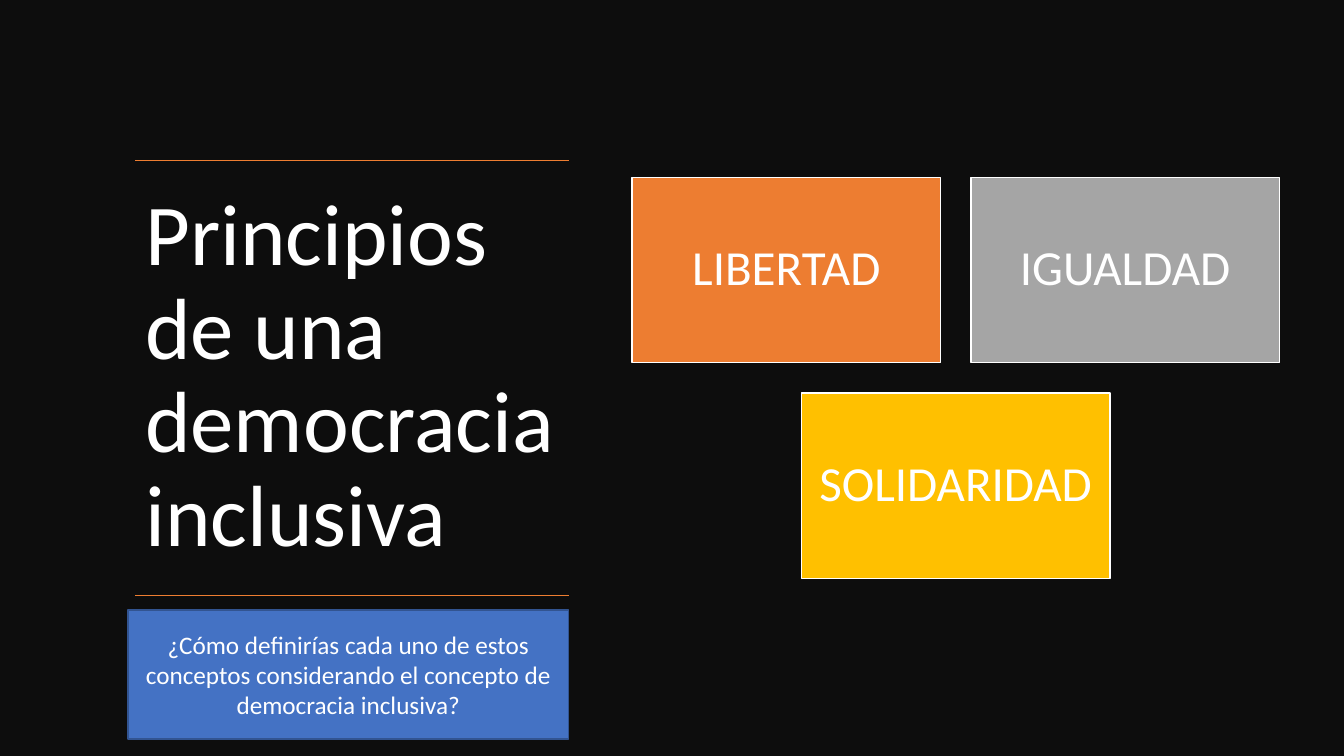
import pptx
import pptx.dml.color
import pptx.enum.shapes
import pptx.enum.text
import pptx.oxml.ns
import pptx.util
from lxml import etree
from pptx.util import Inches

COLORS = {
    "background": "0D0D0D",
    "text": "FFFFFF",
    "orange": "ED7D31",
    "gray": "A5A5A5",
    "gold": "FFC000",
    "blue": "4472C4",
    "blue_edge": "325491",
}
FONT = "Calibri"


def rgb(name):
    return pptx.dml.color.RGBColor.from_string(COLORS[name])


class SlideBuilder:
    def __init__(self, presentation):
        title_only = presentation.slide_layouts[5]
        self.slide = presentation.slides.add_slide(title_only)
        background = self.slide.background.fill
        background.solid()
        background.fore_color.rgb = rgb("background")

    def set_text(self, shape, text, size, alignment, line_spacing, inset):
        frame = shape.text_frame
        frame.text = text
        frame.word_wrap = True
        frame.auto_size = pptx.enum.text.MSO_AUTO_SIZE.NONE
        frame.vertical_anchor = pptx.enum.text.MSO_ANCHOR.MIDDLE
        frame.margin_left = frame.margin_right = Inches(inset)
        frame.margin_top = frame.margin_bottom = Inches(inset)
        paragraph = frame.paragraphs[0]
        paragraph.alignment = alignment
        paragraph.line_spacing = line_spacing
        paragraph.font.name = FONT
        paragraph.font.size = pptx.util.Pt(size)
        paragraph.font.color.rgb = rgb("text")

    def title(self, text, left, top, width, height):
        title = self.slide.shapes.title
        title.left, title.top = Inches(left), Inches(top)
        title.width, title.height = Inches(width), Inches(height)
        self.set_text(title, text, 62, pptx.enum.text.PP_ALIGN.LEFT, 0.9, 0.1)

    def rule(self, left, right, y):
        line = self.slide.shapes.add_connector(
            pptx.enum.shapes.MSO_CONNECTOR.STRAIGHT,
            Inches(left), Inches(y), Inches(right), Inches(y))
        line.line.color.rgb = rgb("orange")
        line.line.width = pptx.util.Pt(1)
        properties = line._element.spPr
        etree.SubElement(properties, pptx.oxml.ns.qn("a:effectLst"))

    def box(self, text, left, top, width, height, fill, edge, size,
            line_spacing=1.0, inset=0.1):
        box = self.slide.shapes.add_shape(
            pptx.enum.shapes.MSO_SHAPE.RECTANGLE,
            Inches(left), Inches(top), Inches(width), Inches(height))
        box.shadow.inherit = False
        box.fill.solid()
        box.fill.fore_color.rgb = rgb(fill)
        box.line.color.rgb = rgb(edge)
        box.line.width = pptx.util.Pt(1)
        self.set_text(box, text, size, pptx.enum.text.PP_ALIGN.CENTER,
                      line_spacing, inset)


def main():
    presentation = pptx.Presentation()
    presentation.slide_width = Inches(13.33)
    presentation.slide_height = Inches(7.5)
    builder = SlideBuilder(presentation)

    left, right, top, bottom = 1.34, 5.64, 1.59, 5.91
    builder.title("Principios de una democracia inclusiva",
                  left, top, right - left, bottom - top)
    for y in (top, bottom):
        builder.rule(left, right, y)

    card_width, card_height, gap = 3.06, 1.84, 0.3
    cards_left, cards_top = 6.27, 1.76
    # Columns may be fractional: the last card is centred below the others.
    principles = [
        ("LIBERTAD", 0, 0, "orange"),
        ("IGUALDAD", 1, 0, "gray"),
        ("SOLIDARIDAD", 0.5, 1, "gold"),
    ]
    for name, column, row, fill in principles:
        builder.box(name,
                    cards_left + column * (card_width + gap),
                    cards_top + row * (card_height + gap),
                    card_width, card_height, fill, "text", 35,
                    line_spacing=0.9, inset=0.15)

    builder.box("¿Cómo definirías cada uno de estos conceptos considerando "
                "el concepto de democracia inclusiva?",
                1.27, 6.05, 4.37, 1.28, "blue", "blue_edge", 18)

    presentation.save("out.pptx")


if __name__ == "__main__":
    main()
